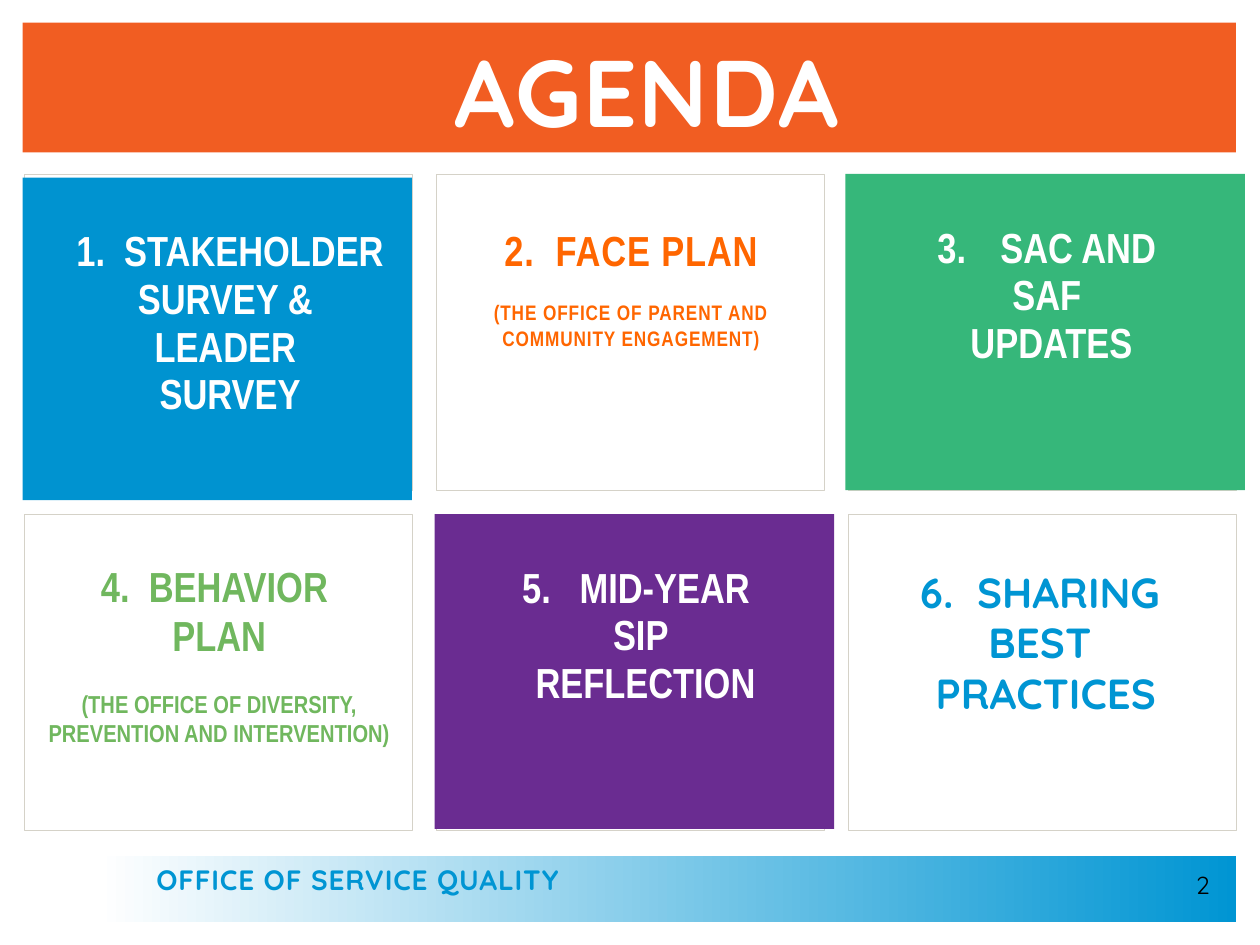
from pptx import Presentation, util as u
from pptx.dml.color import RGBColor
from pptx.enum import shapes, text
from pptx.oxml.xmlchemy import OxmlElement

WHITE = RGBColor(0xFF, 0xFF, 0xFF)
BLACK = RGBColor(0, 0, 0)
ORANGE = RGBColor(0xF1, 0x5D, 0x22)
BRIGHT_ORANGE = RGBColor(0xFF, 0x66, 0x00)
SKY = RGBColor(0x00, 0x95, 0xD3)
BLUE = RGBColor(0x00, 0x93, 0xD0)
EMERALD = RGBColor(0x36, 0xB7, 0x7A)
LEAF = RGBColor(0x70, 0xB7, 0x5E)
PURPLE = RGBColor(0x6A, 0x2C, 0x91)
FRAME = RGBColor(0xD5, 0xD2, 0xC8)
NARROW, ROUND = "Arial Narrow", "Quicksand"
CENTER = text.PP_ALIGN.CENTER


def add_box(left, top, width, height, fill=None, line=None):
    shape = slide.shapes.add_shape(shapes.MSO_SHAPE.RECTANGLE, *map(u.Inches, (left, top, width, height)))
    shape.shadow.inherit = False
    shape.fill.background()
    shape.line.fill.background()
    if fill is not None:
        shape.fill.solid()
        shape.fill.fore_color.rgb = fill
    if line is not None:
        shape.line.color.rgb = line
        shape.line.width = u.Pt(0.25)
    return shape


def write(shape, lines, size, color, font=NARROW, bold=True, align=CENTER, spacing=None, gap=0,
          tracking=0, insets=(0.1, 0.05, 0.1, 0.05), anchor=text.MSO_ANCHOR.TOP,
          detail=None, detail_size=12, detail_spacing=15, detail_gap=0, number=None):
    frame = shape.text_frame
    frame.word_wrap = True
    frame.auto_size = text.MSO_AUTO_SIZE.NONE
    frame.vertical_anchor = anchor
    frame.margin_left, frame.margin_top, frame.margin_right, frame.margin_bottom = map(u.Inches, insets)
    rows = [(line, size, spacing, gap) for line in lines]
    if detail:
        rows.append((detail, detail_size, detail_spacing, detail_gap))
    for index, (line, points, pitch, before) in enumerate(rows):
        paragraph = frame.paragraphs[0] if index == 0 else frame.add_paragraph()
        paragraph.alignment = align
        paragraph.space_before = u.Pt(before if index else 0)
        if pitch:
            paragraph.line_spacing = u.Pt(pitch)
        properties = paragraph._p.get_or_add_pPr()
        numbered = number is not None and index == 0
        properties.set("marL", str(u.Inches(0.5) if numbered else 0))
        properties.set("indent", str(u.Inches(-0.5) if numbered else 0))
        bullet = OxmlElement("a:buAutoNum" if numbered else "a:buNone")
        if numbered:
            bullet.set("type", "arabicPeriod")
            bullet.set("startAt", str(number))
        properties.append(bullet)
        run = paragraph.add_run()
        run.text = line
        run.font.name, run.font.size, run.font.bold = font, u.Pt(points), bold
        run.font.color.rgb = color
        if tracking:
            run._r.get_or_add_rPr().set("spc", str(int(tracking * 100)))


presentation = Presentation()
presentation.slide_width, presentation.slide_height = u.Inches(10), u.Inches(7.5)
slide = presentation.slides.add_slide(presentation.slide_layouts[1])
title, footer = slide.placeholders[0], slide.placeholders[1]

# Footer band and title banner
band = add_box(0.78, 6.79, 9.03, 0.53)
band.fill.gradient()
band.fill.gradient_angle = 0
for stop, color, position in zip(band.fill.gradient_stops, (WHITE, SKY), (0, 1)):
    stop.color.rgb = color
    stop.position = position
add_box(0.18, 0.18, 9.63, 1.03, fill=ORANGE)

# Grid of card frames
for row in range(2):
    for column in range(3):
        add_box(0.19 + 3.27 * column, 1.38 + 2.7 * row, 3.08, 2.51, line=FRAME)

# Title, footer label and page number
for placeholder, place in ((title, (1.12, 0.2, 8.03, 1.06)), (footer, (1.24, 6.84, 4.45, 0.28))):
    placeholder.left, placeholder.top, placeholder.width, placeholder.height = map(u.Inches, place)
    slide.shapes._spTree.append(placeholder._element)
write(title, ["AGENDA"], 54, WHITE, font=ROUND, tracking=1,
      insets=(0, 0, 0, 0.1), anchor=text.MSO_ANCHOR.BOTTOM)
write(footer, ["OFFICE OF SERVICE QUALITY"], 16, SKY, font=ROUND, tracking=0.5,
      align=text.PP_ALIGN.LEFT, insets=(0, 0, 0, 0), anchor=text.MSO_ANCHOR.MIDDLE)
page_number = slide.shapes.add_textbox(*map(u.Inches, (7.37, 6.86, 2.33, 0.4)))
write(page_number, ["2"], 14, BLACK, font=ROUND, bold=False, align=text.PP_ALIGN.RIGHT)

# Coloured cards
panels = [
    ((0.18, 1.41, 3.09, 2.56), BLUE, 0.3, None,
     ["1.  STAKEHOLDER", "SURVEY & ", "LEADER ", "SURVEY"]),
    ((6.71, 1.38, 3.17, 2.51), EMERALD, 0.2, 3, ["SAC AND ", "SAF ", "UPDATES"]),
    ((3.45, 4.08, 3.17, 2.5), PURPLE, 0.2, None, ["5.   MID-YEAR ", "SIP", " REFLECTION"]),
]
for place, fill, indent, number, lines in panels:
    write(add_box(*place, fill=fill), lines, 24, WHITE, spacing=21.2, gap=6,
          insets=(indent, 0.48, 0.1, 0.05), number=number)

# White cards
labels = [
    ((3.46, 1.24, 3.1, 2.66), 0.55, ["2.  FACE PLAN"], BRIGHT_ORANGE,
     dict(spacing=28.5, tracking=0.5, detail_gap=13,
          detail="(THE OFFICE OF PARENT AND COMMUNITY ENGAGEMENT)")),
    ((0.2, 4.02, 3.08, 2.33), 0.43, ["4.  BEHAVIOR ", "PLAN"], LEAF,
     dict(spacing=28.5, detail_size=14, detail_spacing=17, detail_gap=16,
          detail="(THE OFFICE OF DIVERSITY, PREVENTION AND INTERVENTION)")),
    ((6.77, 4.08, 3.06, 2.47), 0.41, ["6.  SHARING ", "BEST ", "PRACTICES"], SKY,
     dict(spacing=29, font=ROUND)),
]
for place, top_inset, lines, color, options in labels:
    label = slide.shapes.add_textbox(*map(u.Inches, place))
    write(label, lines, 24, color, insets=(0.1, top_inset, 0.1, 0.05), **options)

presentation.save("out.pptx")
